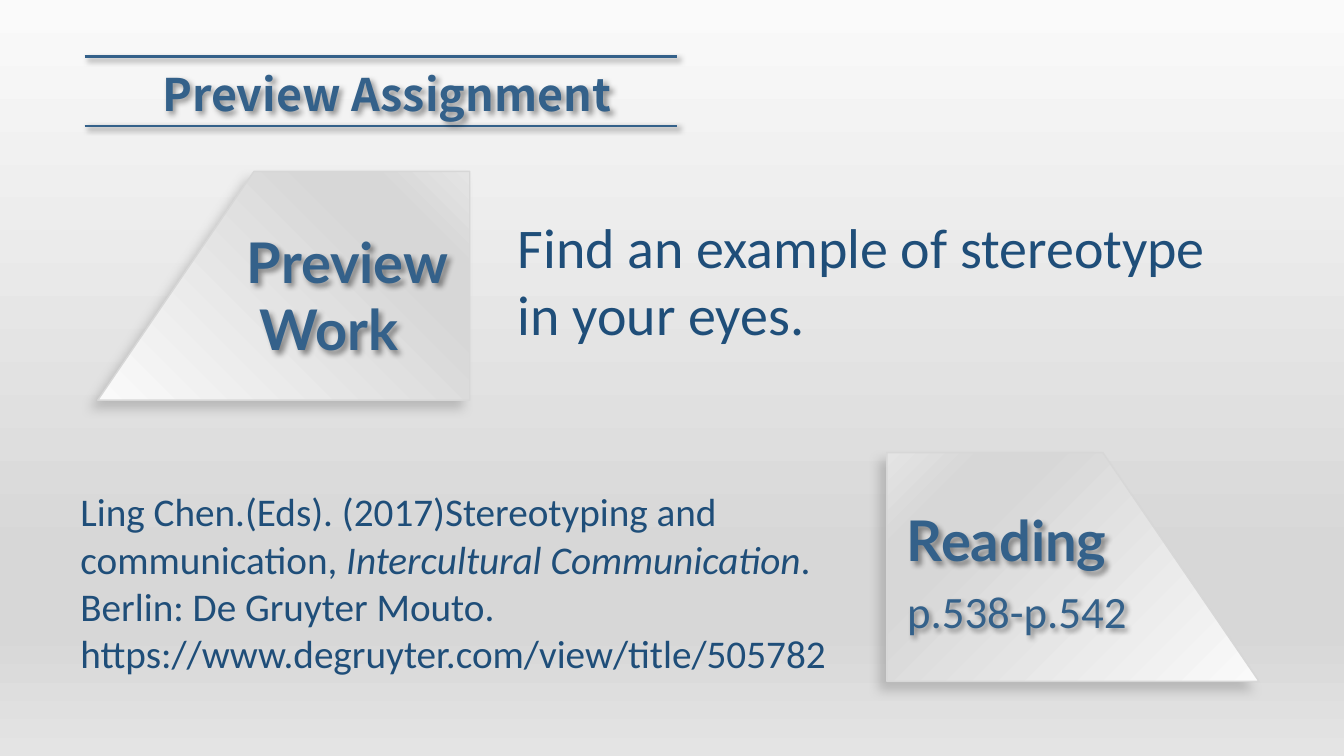
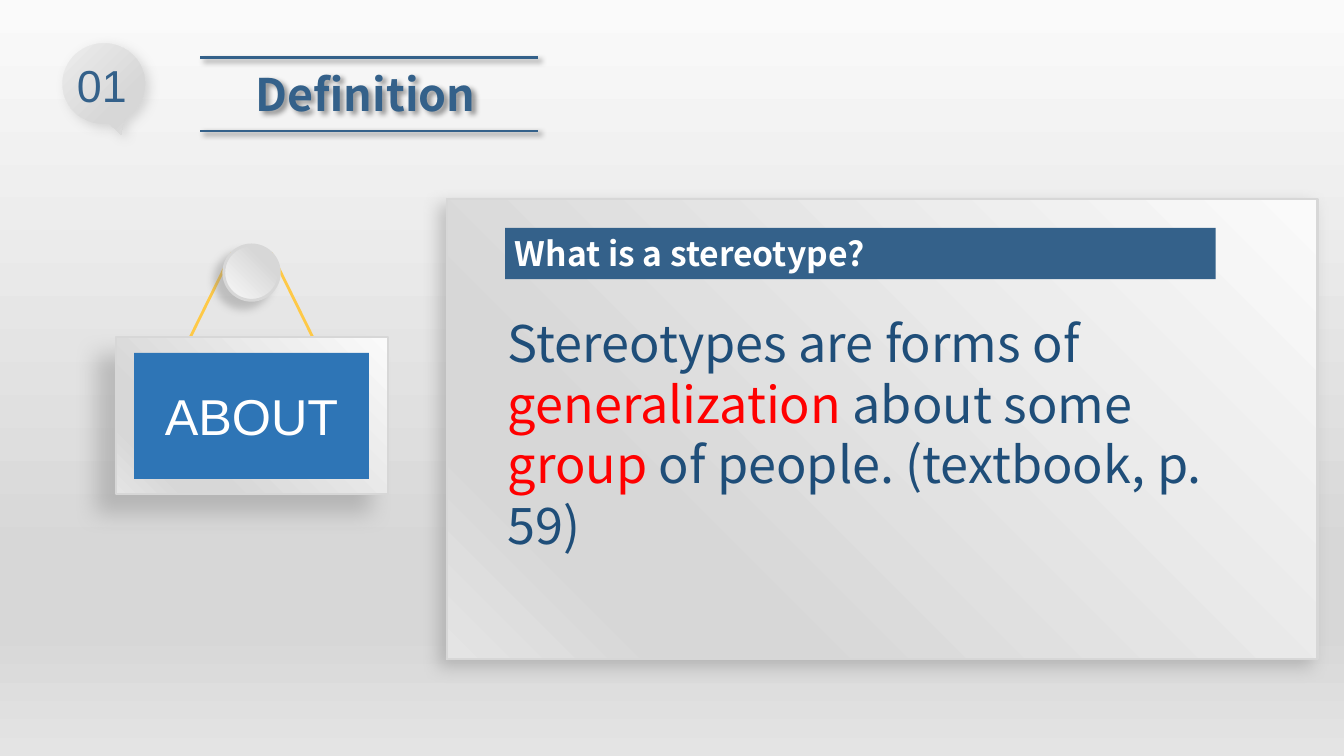
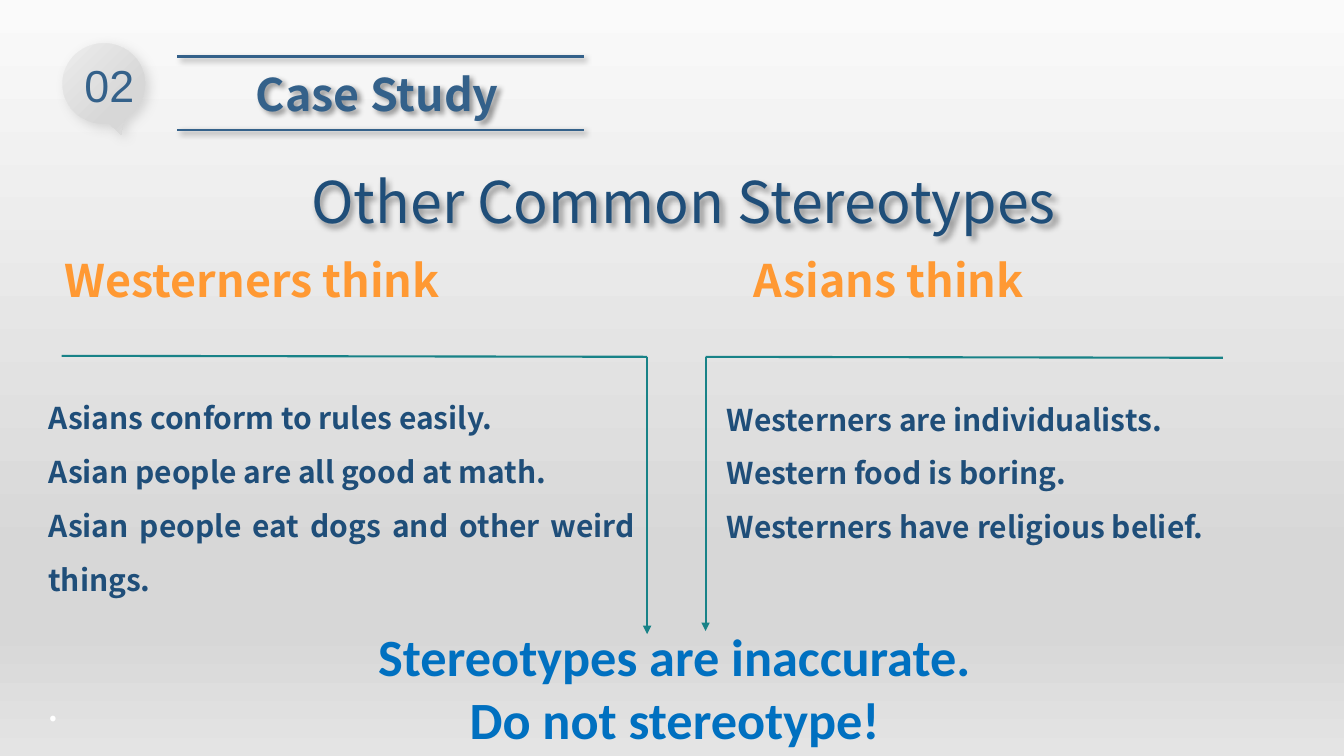
from dataclasses import dataclass, replace
from lxml.etree import SubElement
from pptx import Presentation
from pptx.dml.color import RGBColor as Rgb
from pptx.enum.shapes import MSO_CONNECTOR as Link, MSO_SHAPE as Form
from pptx.enum.text import MSO_ANCHOR as Hold, PP_ALIGN as Align
from pptx.oxml.ns import qn
from pptx.util import Inches, Pt

WIDE, HIGH = Inches(13.333), Inches(7.5)


@dataclass(frozen=True)
class Look:
    size: float
    face: str
    color: str
    bold: bool = False
    align: Align = Align.LEFT
    slant: bool = False


@dataclass(frozen=True)
class Theme:
    steel: str = "34618A"
    navy: str = "1F4E79"
    plate: str = "2E75B6"
    edge: str = "D7D7D7"
    rope: str = "FEC947"
    teal: str = "188287"
    red: str = "FF0000"
    white: str = "FFFFFF"
    silver: tuple = ((0, "FAFAFA"), (74, "D7D7D7"), (83, "D7D7D7"), (100, "E4E4E4"))
    pearl: tuple = ((0, "EDEDED"), (74, "D7D7D7"), (83, "D7D7D7"), (100, "E4E4E4"))
    soft: tuple = ("000000", 4, 3, 45)
    title: Look = Look(32, "Noto Sans CJK SC", steel, True)
    label: Look = Look(40, "Lato", steel, True)
    pages: Look = Look(32, "Calibri", steel)
    task: Look = Look(40, "Calibri", navy)
    cite: Look = Look(28, "Calibri", navy)
    number: Look = Look(32, "Arial", steel, align=Align.CENTER)
    sign: Look = Look(36, "Arial", white, align=Align.CENTER)
    bar: Look = Look(24, "Noto Sans CJK SC", white, True)
    body: Look = Look(36, "Noto Sans CJK SC", navy)
    topic: Look = Look(41, "Noto Sans CJK SC", navy, align=Align.CENTER)
    side: Look = Look(32, "Noto Sans CJK SC", "FF9933", True)
    item: Look = Look(21.4, "Noto Sans CJK SC", navy, True, Align.JUSTIFY)
    close: Look = Look(37.4, "Calibri", "0070C0", True, Align.CENTER)


T = Theme()


def across(share):
    return int(WIDE * share / 100)


def down(share):
    return int(HIGH * share / 100)


def place(x, y, w, h):
    return across(x), down(y), across(w), down(h)


def shade(fill, root, stops, angle):
    fill.gradient()
    fill.gradient_angle = (360 - angle) % 360
    ramp = next(root.iter(qn("a:gsLst")))
    for old in list(ramp):
        ramp.remove(old)
    for spot, color in stops:
        stop = SubElement(ramp, qn("a:gs"), pos=str(spot * 1000))
        SubElement(stop, qn("a:srgbClr"), val=color)


def cast(shape, shadow=None):
    effect = SubElement(shape._element.spPr, qn("a:effectLst"))
    if shadow:
        color, blur, gap, angle = shadow
        outer = SubElement(effect, qn("a:outerShdw"), blurRad=str(Pt(blur)),
                           dist=str(Pt(gap)), dir=str(angle * 60000),
                           algn="ctr", rotWithShape="0")
        tone = SubElement(outer, qn("a:srgbClr"), val=color)
        SubElement(tone, qn("a:alpha"), val="40000")


def paint(shape, fill, angle=None, edge=0, shadow=None):
    if angle is None:
        shape.fill.solid()
        shape.fill.fore_color.rgb = Rgb.from_string(fill)
    else:
        shade(shape.fill, shape._element.spPr, fill, angle)
    if edge:
        shape.line.color.rgb = Rgb.from_string(T.edge)
        shape.line.width = Pt(edge)
    else:
        shape.line.fill.background()
    cast(shape, shadow)


def style(run, look):
    font = run.font
    font.size, font.name = Pt(look.size), look.face
    font.bold, font.italic = look.bold, look.slant
    font.color.rgb = Rgb.from_string(look.color)


def write(shape, text, look, pitch=None):
    frame = shape.text_frame
    frame.word_wrap = True
    frame.text = text
    for para in frame.paragraphs:
        para.alignment = look.align
        if pitch:
            para.line_spacing = pitch
        for run in para.runs:
            style(run, look)


def note(slide, spot, text, look, shadow=None, pitch=None, inset=True):
    box = slide.shapes.add_textbox(*place(*spot))
    frame = box.text_frame
    if not inset:
        frame.margin_left = frame.margin_right = 0
        frame.margin_top = frame.margin_bottom = 0
    write(box, text, look, pitch)
    if shadow:
        cast(box, shadow)
    return box


def blend(slide, spot, parts):
    box = note(slide, spot, "", parts[0][1])
    for text, look in parts:
        run = box.text_frame.paragraphs[0].add_run()
        run.text = text
        style(run, look)


def panel(slide, form, spot, fill, angle=None, edge=0, shadow=None):
    shape = slide.shapes.add_shape(form, *place(*spot))
    paint(shape, fill, angle, edge, shadow)
    return shape


def plaque(slide, spot, fill, text, look):
    shape = panel(slide, Form.RECTANGLE, spot, fill)
    shape.text_frame.vertical_anchor = Hold.MIDDLE
    write(shape, text, look)


def rule(slide, x, y, to_x, to_y, color, width, shadow=None, arrow=False):
    line = slide.shapes.add_connector(
        Link.STRAIGHT, across(x), down(y), across(to_x), down(to_y))
    line.line.color.rgb = Rgb.from_string(color)
    line.line.width = Pt(width)
    if arrow:
        SubElement(line.line._get_or_add_ln(), qn("a:tailEnd"), type="triangle")
    cast(line, shadow)


def wedge(slide, x, y, flip=False):
    w, h, cut = 27.68, 30.27, 11.62
    dots = [(0, h), (cut, 0), (w, 0), (w, h)]
    if flip:
        dots = [(w - a, b) for a, b in dots]
    dots = [(across(x + a), down(y + b)) for a, b in dots]
    draft = slide.shapes.build_freeform(*dots[0])
    draft.add_line_segments(dots[1:], close=True)
    paint(draft.convert_to_shape(), T.silver, 225 if flip else 315, 1,
          ("808080", 8, 8, 135))


def badge(slide, text, x, w):
    drop = panel(slide, Form.OVAL_CALLOUT, (4.65, 5.73, 6.15, 10.67), T.pearl, 135,
                 shadow=("A6A6A6", 8, 4, 45))
    drop._element.spPr.xfrm.set("flipH", "1")
    note(slide, (x, 6.93, w, 8.53), text, T.number)


def start(deck, title, x, w, left, right, top, low):
    slide = deck.slides.add_slide(deck.slide_layouts[6])
    shade(slide.background.fill, slide._element, T.silver, 90)
    for y in (low, top):
        rule(slide, left, y, right, y, T.steel, 2, T.soft)
    note(slide, (x, 8.13, w, 8.53), title, T.title, T.soft)
    return slide


def preview(deck):
    slide = start(deck, "Preview Assignment", 11.33, 36, 6.3, 50.4, 7.47, 16.67)
    wedge(slide, 7.28, 22.67)
    wedge(slide, 66, 59.87, True)
    note(slide, (37.8, 27.47, 56.4, 19.33),
         "Find an example of stereotype in your eyes.", T.task)
    blend(slide, (5.25, 63.87, 59.7, 26.53), [
        ("Ling Chen.(Eds). (2017)Stereotyping and communication, ", T.cite),
        ("Intercultural Communication", replace(T.cite, slant=True)),
        (". Berlin: De Gruyter Mouto. https://www.degruyter.com/view/title/505782", T.cite)])
    note(slide, (66.75, 76.53, 22.35, 9.33), "p.538-p.542", T.pages, T.soft)
    note(slide, (66.75, 66.27, 18.45, 10.27), "Reading", T.label, T.soft)
    box = note(slide, (17.63, 29.47, 17.33, 19.33), "Preview\nWork", T.label, T.soft)
    inner = box.text_frame.paragraphs[1]._p.get_or_add_pPr()
    inner.set("marL", str(Inches(0.13)))
    inner.set("indent", "0")


def define(deck):
    slide = start(deck, "Definition", 18.3, 18.45, 14.92, 40.05, 7.6, 17.33)
    badge(slide, "01", 4.73, 5.7)
    for top, low in ((20.18, 23.25), (17.25, 14.18)):
        rule(slide, top, 33.47, low, 44.53, T.rope, 2)
    panel(slide, Form.OVAL, (16.65, 32.4, 4.13, 7.33), T.silver, 315, 2,
          ("808080", 6, 8, 140))
    panel(slide, Form.RECTANGLE, (8.63, 44.53, 20.25, 20.8), T.silver, 135, 1.5,
          ("808080", 16, 19, 135))
    plaque(slide, (9.98, 46.67, 17.48, 16.67), T.plate, "ABOUT", T.sign)
    panel(slide, Form.RECTANGLE, (33.23, 26.27, 64.8, 60.93), T.silver, 135, 1.5,
          ("808080", 12, 7, 135))
    plaque(slide, (37.58, 30.13, 52.88, 6.8), T.steel, "What is a stereotype?", T.bar)
    alert = replace(T.body, color=T.red)
    blend(slide, (37.05, 40.67, 57.15, 33.6), [
        ("Stereotypes are forms of ", T.body), ("generalization", alert),
        (" about some ", T.body), ("group", alert),
        (" of people. (textbook, p. 59)", T.body)])


def study(deck):
    slide = start(deck, "Case Study", 18.3, 19.88, 13.2, 43.43, 7.47, 17.2)
    badge(slide, "02", 5.03, 6.23)
    note(slide, (4.65, 21.33, 92.48, 10.53), "Other Common Stereotypes", T.topic, T.soft)
    for x, w, text in ((56.1, 31.2, "Asians think"), (4.8, 39.15, "Westerners think")):
        note(slide, (x, 33.47, w, 7.2), text, T.side, inset=False)
    note(slide, (54.08, 50.67, 44.85, 21.6),
         "Westerners are individualists.\nWestern food is boring.\n"
         "Westerners have religious belief.", T.item, pitch=1.5, inset=False)
    box = note(slide, (3.6, 50.53, 43.65, 46),
               "Asians conform to rules easily.\nAsian people are all good at math.\n"
               "Asian people eat dogs and other weird things.\n.",
               T.item, pitch=1.5, inset=False)
    dot = box.text_frame.paragraphs[-1]
    dot.line_spacing, dot.space_before = 1.2, Pt(62)
    style(dot.runs[0], replace(T.item, color=T.white))
    for far, near, y, end in ((4.58, 48.15, 47.07, 83.87), (90.98, 52.5, 47.33, 83.47)):
        rule(slide, far, y, near, 47.2, T.teal, 1.5)
        rule(slide, near, 47.2, near, end, T.teal, 1.5, arrow=True)
    note(slide, (23.93, 81.87, 52.58, 18.13),
         "Stereotypes are inaccurate.\nDo not stereotype!", T.close)


def main():
    deck = Presentation()
    deck.slide_width, deck.slide_height = WIDE, HIGH
    preview(deck)
    define(deck)
    study(deck)
    deck.save("out.pptx")


if __name__ == "__main__":
    main()
